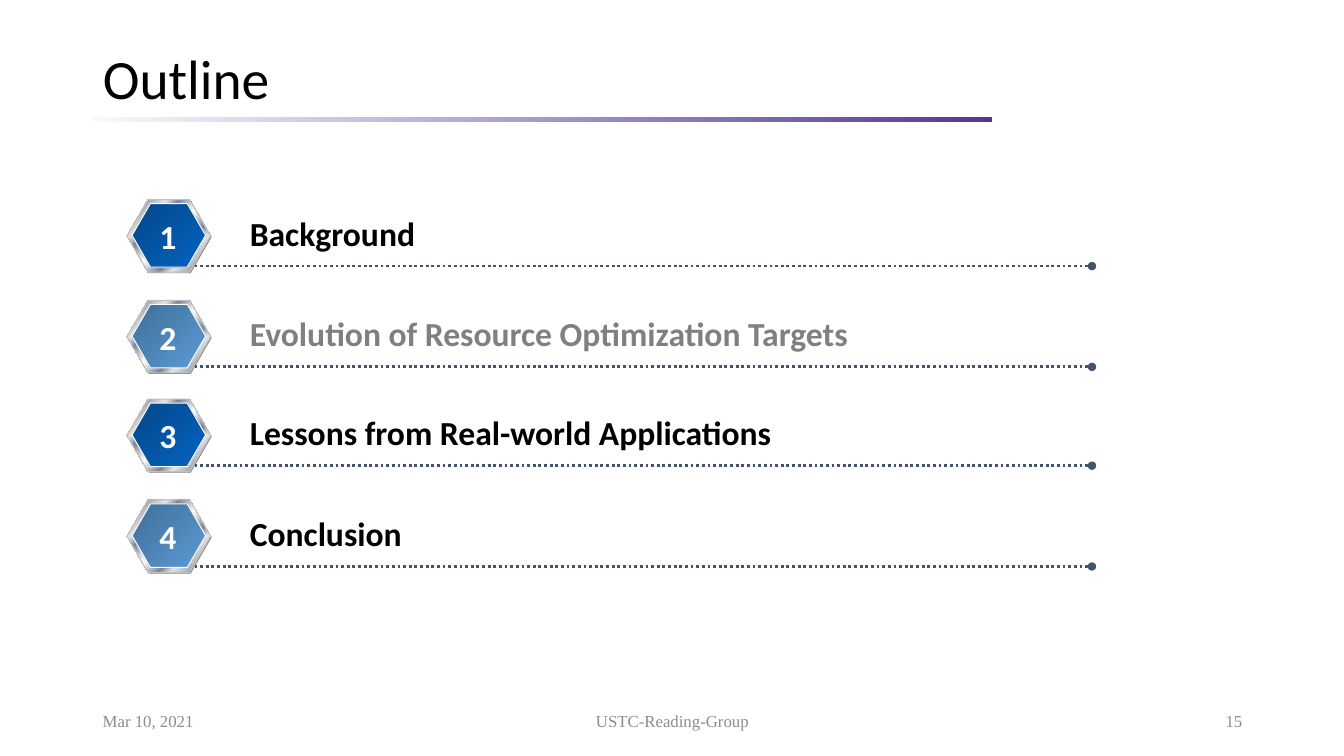
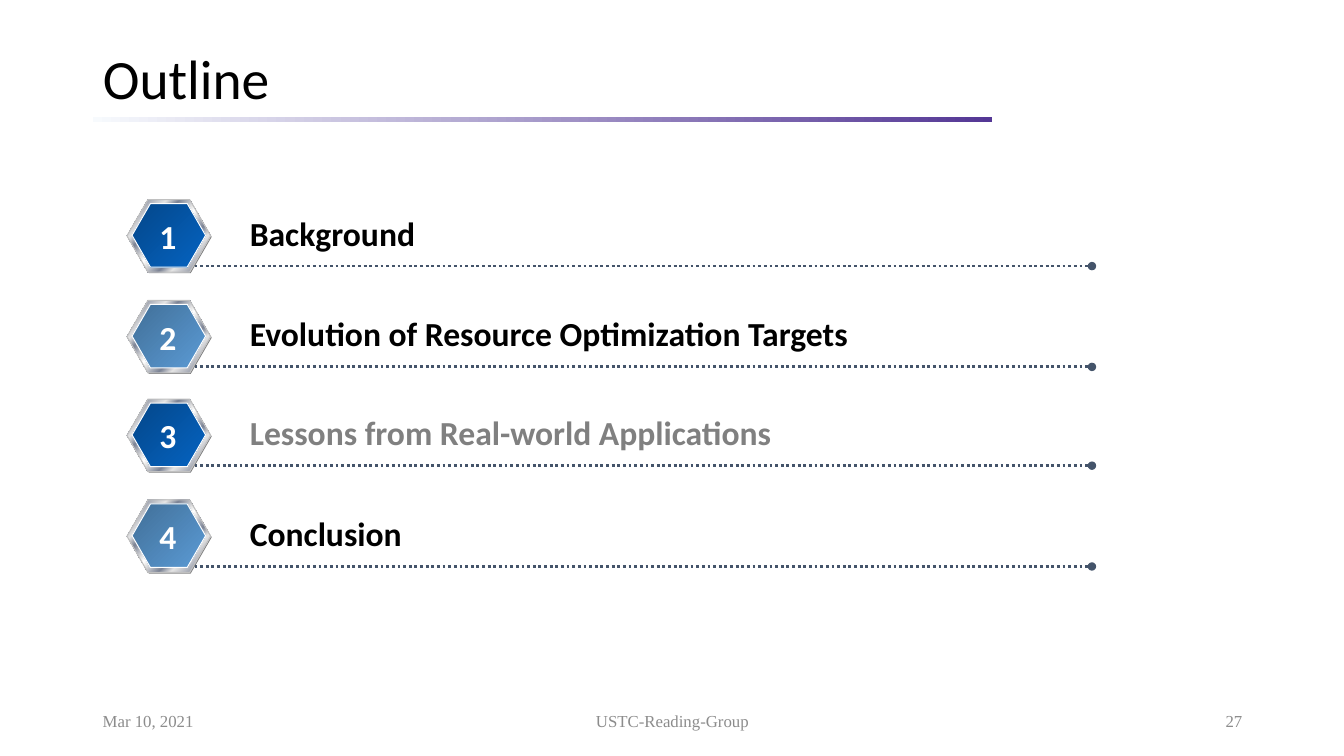
from pptx import Presentation
from pptx import util as u
from pptx.dml.color import RGBColor
from pptx.enum import dml, shapes, text
from pptx.oxml.ns import qn
from lxml import etree

# Colours
BLACK = RGBColor(0x00, 0x00, 0x00)
WHITE = RGBColor(0xFF, 0xFF, 0xFF)
GREY = RGBColor(0x80, 0x80, 0x80)
FOOTER_GREY = RGBColor(0x8C, 0x8C, 0x8C)
SILVER = RGBColor(0xC0, 0xC0, 0xC0)
LIGHT = RGBColor(0xE6, 0xE6, 0xE6)
STEEL = RGBColor(0x7D, 0x84, 0x96)
SLATE = RGBColor(0x44, 0x54, 0x6A)
DEEP_BLUE = RGBColor(0x04, 0x47, 0x8A)
BLUE = RGBColor(0x05, 0x63, 0xC1)
DULL_BLUE = RGBColor(0x41, 0x6F, 0x98)
SKY = RGBColor(0x5B, 0x9B, 0xD5)
PALE = RGBColor(0xF7, 0xFA, 0xFD)
PURPLE = RGBColor(0x54, 0x37, 0x95)

# Gradients: (position in percent, colour)
METAL = [(0, LIGHT), (7, STEEL), (26, LIGHT), (34, STEEL), (46, LIGHT), (50, WHITE),
         (54, LIGHT), (66, STEEL), (74, LIGHT), (93, STEEL), (100, LIGHT)]
UNDERLINE = [(0, PALE), (100, PURPLE)]
BADGES = [[(0, DEEP_BLUE), (100, BLUE)], [(0, DULL_BLUE), (100, SKY)]]

# Content: (row top, topic), and for each slide its number and greyed row
ROWS = [(198, "Background"), (298, "Evolution of Resource Optimization Targets"),
        (396, "Lessons from Real-world Applications"), (496, "Conclusion")]
SLIDES = [(15, 2), (27, 3)]


def px(length):
    """100 px make one inch."""
    return u.Emu(length * 9144)


class Deck:
    """The shared style and the slide being built."""
    sans, serif = "Calibri", "Times New Roman"

    def __init__(self):
        self.presentation = Presentation()
        self.presentation.slide_width = px(1333)
        self.presentation.slide_height = px(750)
        self.slide = None

    def new_slide(self, title, number):
        layout = self.presentation.slide_layouts.get_by_name("Title Only")
        self.slide = self.presentation.slides.add_slide(layout)
        # Underline and title
        self.shape(self.slide.shapes, shapes.MSO_SHAPE.RECTANGLE, (92, 116, 892, 5), UNDERLINE)
        placeholder = self.slide.shapes.title
        placeholder.left, placeholder.top = px(92), px(43)
        placeholder.width, placeholder.height = px(1150), px(75)
        self.set_text(placeholder, title, 39.6, BLACK, anchor=text.MSO_ANCHOR.MIDDLE)
        placeholder.text_frame.paragraphs[0].line_spacing = 0.9
        # Footer
        for left, width, words, align in (
                (92, 300, "Mar 10, 2021", text.PP_ALIGN.LEFT),
                (442, 450, "USTC-Reading-Group", text.PP_ALIGN.CENTER),
                (942, 300, str(number), text.PP_ALIGN.RIGHT)):
            self.label((left, 695, width, 40), words, 12, FOOTER_GREY, font=self.serif,
                       align=align, anchor=text.MSO_ANCHOR.MIDDLE)

    def set_text(self, shape, words, size, colour, bold=False, font=sans,
                 align=text.PP_ALIGN.LEFT, anchor=text.MSO_ANCHOR.TOP):
        frame = shape.text_frame
        frame.word_wrap = True
        frame.auto_size = text.MSO_AUTO_SIZE.NONE
        frame.vertical_anchor = anchor
        paragraph = frame.paragraphs[0]
        paragraph.alignment = align
        run = paragraph.add_run()
        run.text = words
        run.font.name, run.font.size, run.font.bold = font, u.Pt(size), bold
        run.font.color.rgb = colour

    def label(self, box, words, size, colour, **style):
        self.set_text(self.slide.shapes.add_textbox(*map(px, box)), words, size, colour, **style)

    def shape(self, parent, kind, box, fill, line=None, angle=0):
        """Fill is one colour or a list of gradient stops."""
        shape = parent.add_shape(kind, *map(px, box))
        shape.shadow.inherit = False
        if isinstance(fill, list):
            self.gradient(shape, fill, angle)
        else:
            shape.fill.solid()
            shape.fill.fore_color.rgb = fill
        if line is None:
            shape.line.fill.background()
        else:
            shape.line.color.rgb = line
            shape.line.width = u.Pt(0.75)
        return shape

    def gradient(self, shape, stops, angle):
        shape.fill.gradient()
        shape.fill.gradient_angle = -angle % 360
        stop_list = shape._element.spPr.find(qn("a:gradFill")).find(qn("a:gsLst"))
        for old_stop in list(stop_list):
            stop_list.remove(old_stop)
        for position, colour in stops:
            stop = etree.SubElement(stop_list, qn("a:gs"), pos=str(position * 1000))
            etree.SubElement(stop, qn("a:srgbClr"), val=str(colour))

    def badge(self, top, stops):
        group = self.slide.shapes.add_group_shape().shapes
        for box, fill, line in (
                ((127, top + 1, 83, 72), GREY, None),
                ((126, top, 83, 72), METAL, SILVER),
                ((131, top + 4, 73, 63), stops, WHITE)):
            hexagon = self.shape(group, shapes.MSO_SHAPE.HEXAGON, box, fill, line, angle=45)
            hexagon.adjustments[0] = 0.289

    def dotted_line(self, left, right, top):
        line = self.slide.shapes.add_connector(
            shapes.MSO_CONNECTOR.STRAIGHT, px(left), px(top), px(right), px(top))
        line.line.color.rgb = SLATE
        line.line.width = u.Pt(2)
        line.line.dash_style = dml.MSO_LINE.ROUND_DOT
        outline = line._element.spPr.find(qn("a:ln"))
        etree.SubElement(outline, qn("a:tailEnd"), type="oval")
        etree.SubElement(line._element.spPr, qn("a:effectLst"))

    def outline_row(self, number, top, topic, colour):
        self.badge(top, BADGES[(number - 1) % 2])
        self.dotted_line(193, 1083, top + 66)
        self.label((238, top + 8, 704, 50), topic, 24, colour, bold=True)
        self.label((147, top + 11, 39, 51), str(number), 24, WHITE, bold=True,
                   align=text.PP_ALIGN.CENTER)


def main():
    deck = Deck()
    for slide_number, grey_row in SLIDES:
        deck.new_slide("Outline", slide_number)
        for number, (top, topic) in enumerate(ROWS, start=1):
            deck.outline_row(number, top, topic, GREY if number == grey_row else BLACK)
    deck.presentation.save("out.pptx")


if __name__ == "__main__":
    main()
